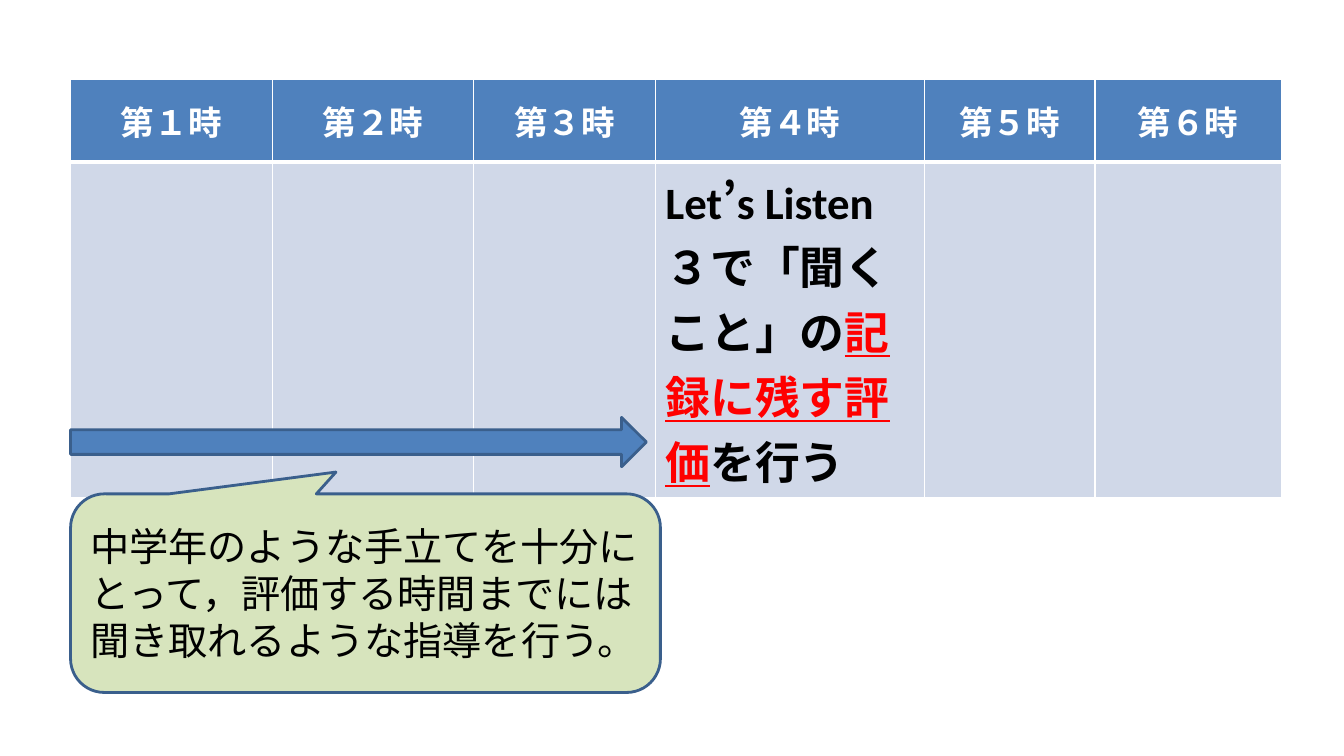
"""Build the lesson plan slide: a six-lesson table, an arrow and a callout."""
from lxml import etree
from pptx import Presentation
from pptx.dml.color import RGBColor
from pptx.enum.lang import MSO_LANGUAGE_ID
from pptx.enum.shapes import MSO_SHAPE
from pptx.enum.text import MSO_ANCHOR, PP_ALIGN
from pptx.oxml.ns import qn
from pptx.util import Inches, Pt

ARROW = MSO_SHAPE.RIGHT_ARROW
CALLOUT = MSO_SHAPE.ROUNDED_RECTANGULAR_CALLOUT
MIDDLE = MSO_ANCHOR.MIDDLE
LEFT, CENTER = PP_ALIGN.LEFT, PP_ALIGN.CENTER
JAPANESE = MSO_LANGUAGE_ID.JAPANESE

THEME = {
    "blue": "4F81BD", "edge": "3A5F8C", "pale": "D0D8E8", "green": "D7E4BD",
    "white": "FFFFFF", "black": "000000", "red": "FF0000",
    "head": 24, "body": 32, "note": 28,
}
COLS = [2, 2, 1.8, 2.67, 1.69, 1.85]
ROWS = [0.82, 2.02]
X, Y = 0.7, 0.79


def color(name):
    return RGBColor.from_string(THEME[name])


def write(par, text, size="body", tint="black", font="Calibri",
          bold=True, under=False, align=LEFT):
    par.alignment = align
    run = par.add_run()
    run.text = text
    face = run.font
    face.name, face.size = font, Pt(THEME[size])
    face.bold, face.underline = bold, under
    face.color.rgb = color(tint)
    face.language_id = JAPANESE


deck = Presentation()
deck.slide_width, deck.slide_height = Inches(13.33), Inches(7.5)
slide = deck.slides.add_slide(deck.slide_layouts[6])

frame = slide.shapes.add_table(len(ROWS), len(COLS), Inches(X), Inches(Y),
                               Inches(sum(COLS)), Inches(sum(ROWS)))
table = frame.table
for col, width in zip(table.columns, COLS):
    col.width = Inches(width)
for row, height in zip(table.rows, ROWS):
    row.height = Inches(height)

for r, fill in enumerate(["blue", "pale"]):
    for c in range(len(COLS)):
        cell = table.cell(r, c)
        cell.fill.solid()
        cell.fill.fore_color.rgb = color(fill)
        props = cell.fill._xPr
        thick = "B" if r == 0 else "T"
        for i, side in enumerate("LRTB"):
            line = etree.Element(qn(f"a:ln{side}"))
            line.set("w", str(Pt(3 if side == thick else 1)))
            solid = etree.SubElement(line, qn("a:solidFill"))
            etree.SubElement(solid, qn("a:srgbClr")).set("val", THEME["white"])
            props.insert(i, line)

for c, digit in enumerate("１２３４５６"):
    cell = table.cell(0, c)
    cell.vertical_anchor = MIDDLE
    write(cell.text_frame.paragraphs[0], f"第{digit}時",
          size="head", tint="white", align=CENTER)

task = table.cell(1, 3).text_frame.paragraphs[0]
write(task, "Let’s Listen３で「聞くこと」の")
write(task, "記録に残す評価", tint="red", under=True)
write(task, "を行う")

shapes = []
for kind, top, width, height, fill in [
    (ARROW, 4.14, 5.71, 0.49, "blue"),
    (CALLOUT, 4.9, 5.85, 1.97, "green"),
]:
    shape = slide.shapes.add_shape(kind, Inches(X), Inches(top),
                                   Inches(width), Inches(height))
    shape.shadow.inherit = False
    shape.fill.solid()
    shape.fill.fore_color.rgb = color(fill)
    shape.line.color.rgb = color("edge")
    shape.line.width = Pt(2)
    shapes.append(shape)

note = shapes[1]
for i, value in enumerate([-0.05, -0.61, 0.17]):
    note.adjustments[i] = value
note.text_frame.word_wrap = True
note.text_frame.vertical_anchor = MIDDLE
write(note.text_frame.paragraphs[0],
      "中学年のような手立てを十分にとって，評価する時間までには聞き取れるような指導を行う。",
      size="note", font="Arial", bold=False)

deck.save("out.pptx")
